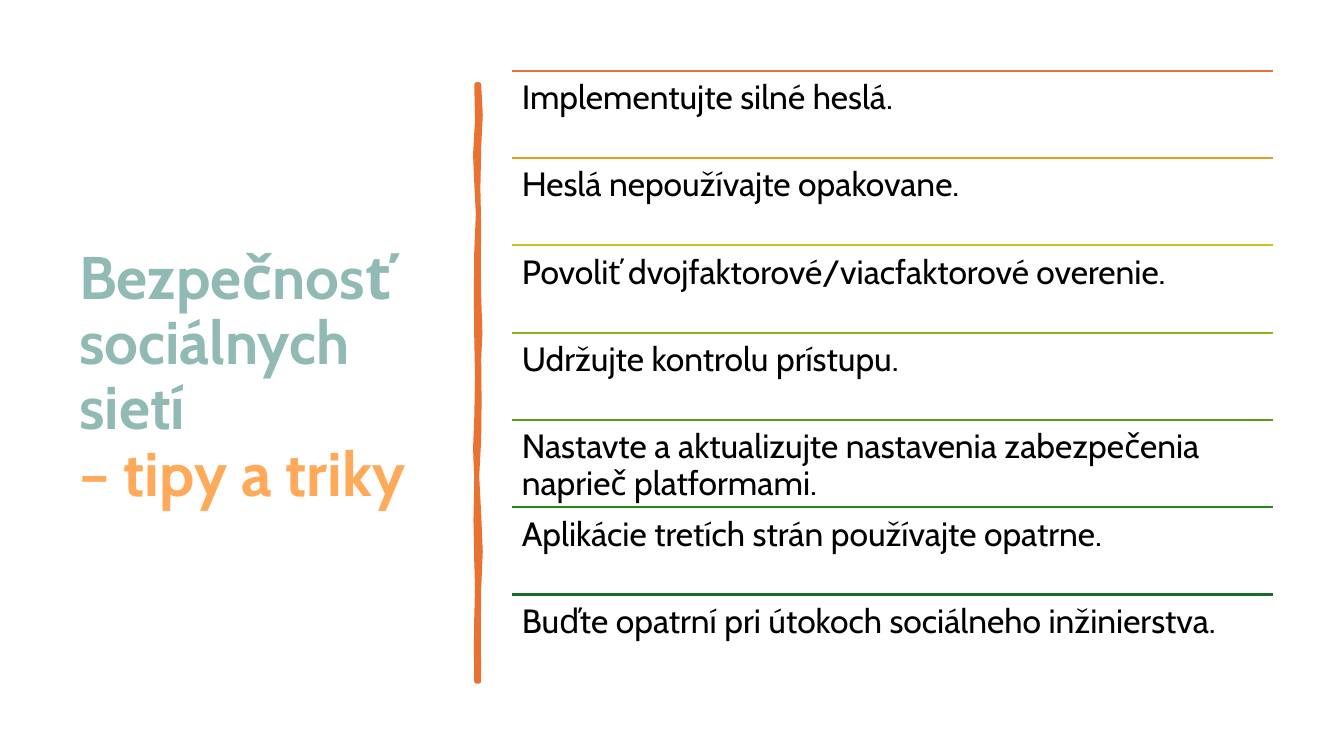
from lxml.etree import SubElement
from pptx import Presentation
from pptx.dml.color import RGBColor
from pptx.enum.shapes import MSO_CONNECTOR
from pptx.enum.text import MSO_ANCHOR
from pptx.oxml.ns import qn
from pptx.util import Cm, Pt

# Content
FONT = "Cabin"
TITLE = [("Bezpečnosť sociálnych sietí", 43, "92BAB5"),
         ("– tipy a triky", 44, "FFAA5A")]
TIPS = [
    ("Implementujte silné heslá.", "E97132"),
    ("Heslá nepoužívajte opakovane.", "E39D1F"),
    ("Povoliť dvojfaktorové/viacfaktorové overenie.", "CBC11E"),
    ("Udržujte kontrolu prístupu.", "8EB21E"),
    ("Nastavte a aktualizujte nastavenia zabezpečenia naprieč platformami.", "56991D"),
    ("Aplikácie tretích strán používajte opatrne.", "2C821B"),
    ("Buďte opatrní pri útokoch sociálneho inžinierstva.", "196B24"),
]

# Layout in centimetres
TITLE_BOX = (1.75, 1.78, 9.5, 15.52)
TIPS_LEFT, TIPS_TOP, TIPS_WIDTH, TIP_PITCH = 12.9, 1.78, 19.18, 2.2
BAR_COLOR = "E97132"
BAR_RIGHT = [(12.07, 2.13), (12.11, 2.9), (12.07, 3.71), (12.05, 4.75), (12.07, 5.74),
             (12.06, 6.6), (12.07, 7.47), (12.1, 8.4), (12.07, 9.04), (12.08, 10.1),
             (12.07, 11.07), (12.02, 12), (12.07, 12.95), (12.11, 13.9), (12.07, 14.83),
             (12.06, 16), (12.07, 17.17)]
BAR_LEFT = [(12.01, 17.17), (12, 16.3), (12.01, 15.57), (12.03, 14.8), (12.01, 14.15),
            (11.99, 13.1), (12.01, 12.12), (11.98, 11.3), (12.01, 10.54), (12.03, 9.5),
            (12.01, 8.51), (12, 7.4), (12.01, 6.35), (12.05, 5.4), (12.01, 4.6),
            (11.98, 3.9), (12.03, 3), (12.01, 2.13)]


def color(hex_value):
    return RGBColor.from_string(hex_value)


def add_text_box(slide, box, anchor):
    frame = slide.shapes.add_textbox(*map(Cm, box)).text_frame
    frame.word_wrap = True
    frame.vertical_anchor = anchor
    paragraph = frame.paragraphs[0]
    paragraph.line_spacing = 0.9
    paragraph.font.name = FONT
    return frame, paragraph


def add_title(slide):
    frame, paragraph = add_text_box(slide, TITLE_BOX, MSO_ANCHOR.MIDDLE)
    paragraph.font.bold = True
    for index, (text, size, hex_value) in enumerate(TITLE):
        if index:
            paragraph.add_line_break()
        run = paragraph.add_run()
        run.text = text
        run.font.size = Pt(size)
        run.font.color.rgb = color(hex_value)


def add_bar(slide):
    points = [(Cm(x), Cm(y)) for x, y in BAR_RIGHT + BAR_LEFT]
    builder = slide.shapes.build_freeform(*points[0])
    builder.add_line_segments(points[1:], close=True)
    bar = builder.convert_to_shape()
    bar.shadow.inherit = False
    bar.fill.solid()
    bar.fill.fore_color.rgb = color(BAR_COLOR)
    bar.line.color.rgb = color(BAR_COLOR)
    bar.line.width = Pt(3.25)
    SubElement(bar.line._get_or_add_ln(), qn("a:round"))


def add_tip(slide, text, hex_value, top):
    rule = slide.shapes.add_connector(
        MSO_CONNECTOR.STRAIGHT, Cm(TIPS_LEFT), Cm(top), Cm(TIPS_LEFT + TIPS_WIDTH), Cm(top))
    rule.line.color.rgb = color(hex_value)
    rule.line.width = Pt(1.5)
    SubElement(rule._element.spPr, qn("a:effectLst"))

    box = (TIPS_LEFT, top, TIPS_WIDTH, TIP_PITCH)
    frame, paragraph = add_text_box(slide, box, MSO_ANCHOR.TOP)
    frame.margin_left = frame.margin_right = Cm(0.25)
    frame.margin_top = frame.margin_bottom = Cm(0.25)
    paragraph.text = text
    paragraph.font.size = Pt(24)
    paragraph.font.color.rgb = color("000000")


def main():
    presentation = Presentation()
    presentation.slide_width, presentation.slide_height = Cm(33.87), Cm(19.05)
    slide = presentation.slides.add_slide(presentation.slide_layouts[6])
    add_title(slide)
    add_bar(slide)
    for index, (text, hex_value) in enumerate(TIPS):
        add_tip(slide, text, hex_value, TIPS_TOP + index * TIP_PITCH)
    presentation.save("out.pptx")


if __name__ == "__main__":
    main()
